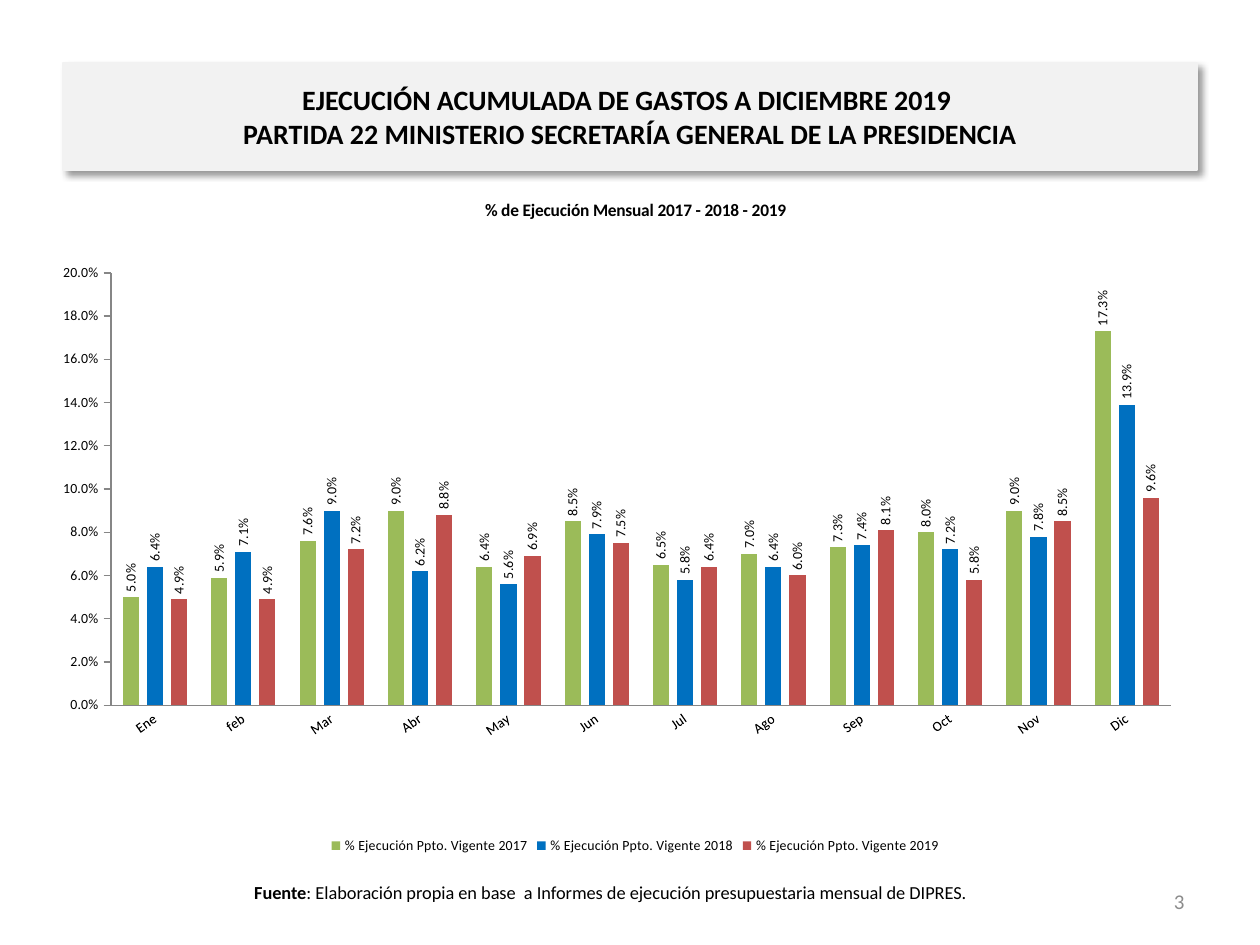
from lxml.etree import SubElement
from pptx import Presentation
from pptx.chart.data import CategoryChartData
from pptx.dml.color import RGBColor
from pptx.enum.chart import (XL_CHART_TYPE, XL_LABEL_POSITION as LABEL_POS,
                             XL_LEGEND_POSITION as LEGEND_POS, XL_TICK_MARK as TICK)
from pptx.enum.text import MSO_ANCHOR as ANCHOR, MSO_AUTO_SIZE as AUTO, PP_ALIGN as ALIGN
from pptx.oxml import parse_xml
from pptx.oxml.ns import nsdecls, qn
from pptx.util import Cm, Pt

FONT = "Calibri"
PERCENT = "0.0%"
COLORS = {
    "text": "000000", "number": "8C8C8C", "band": "F2F2F2", "axis": "868686",
    "2017": "9BBB59", "2018": "0070C0", "2019": "C0504D",
}
MONTHS = ["Ene", "feb", "Mar", "Abr", "May", "Jun",
          "Jul", "Ago", "Sep", "Oct", "Nov", "Dic"]
EXECUTION = {
    "2017": [5.0, 5.9, 7.6, 9.0, 6.4, 8.5, 6.5, 7.0, 7.3, 8.0, 9.0, 17.3],
    "2018": [6.4, 7.1, 9.0, 6.2, 5.6, 7.9, 5.8, 6.4, 7.4, 7.2, 7.8, 13.9],
    "2019": [4.9, 4.9, 7.2, 8.8, 6.9, 7.5, 6.4, 6.0, 8.1, 5.8, 8.5, 9.6],
}
PLOT_AREA = {"x": 0.033, "y": 0.143, "w": 0.944, "h": 0.632}


def rgb(name):
    return RGBColor.from_string(COLORS[name])


def set_attrs(obj, **values):
    for name, value in values.items():
        setattr(obj, name, value)


def format_font(font, size, color="text", bold=False):
    set_attrs(font, name=FONT, size=Pt(size), bold=bold)
    font.color.rgb = rgb(color)


def place(sp, left, top, width, height):
    set_attrs(sp, left=Cm(left), top=Cm(top), width=Cm(width), height=Cm(height))


def add_run(p, text, size, **style):
    r = p.add_run()
    r.text = text
    format_font(r.font, size, **style)


def add_title(slide, lines):
    sp = slide.shapes.title
    place(sp, 1.27, 1.27, 22.86, 2.16)
    sp.fill.solid()
    sp.fill.fore_color.rgb = rgb("band")
    sp.line.color.rgb = rgb("band")
    sp.line.width = Pt(0.75)
    sp._element.spPr.append(parse_xml(
        f'<a:effectLst {nsdecls("a")}><a:outerShdw blurRad="{Pt(4)}" dist="{Pt(3)}" '
        f'dir="2700000" algn="tl" rotWithShape="0"><a:srgbClr val="{COLORS["text"]}">'
        '<a:alpha val="40000"/></a:srgbClr></a:outerShdw></a:effectLst>'))
    tf = sp.text_frame
    set_attrs(tf, auto_size=AUTO.NONE, word_wrap=True, vertical_anchor=ANCHOR.MIDDLE)
    p = tf.paragraphs[0]
    p.alignment = ALIGN.CENTER
    for i, line in enumerate(lines):
        if i:
            p.add_line_break()
        add_run(p, line, 16, bold=True)


def add_text(slide, box, align):
    """Add a one-line text box and return its paragraph."""
    tf = slide.shapes.add_textbox(*map(Cm, box)).text_frame
    set_attrs(tf, word_wrap=True, vertical_anchor=ANCHOR.MIDDLE)
    p = tf.paragraphs[0]
    p.alignment = align
    return p


def rotate_text(element, degrees):
    body = element.find(qn("c:txPr")).find(qn("a:bodyPr"))
    body.set("rot", str(degrees * 60000))
    body.set("vert", "horz")


def set_plot_layout(chart):
    plot_area = chart._chartSpace.chart.plotArea
    for old in plot_area.findall(qn("c:layout")):
        plot_area.remove(old)
    layout = parse_xml(f'<c:layout {nsdecls("c")}><c:manualLayout/></c:layout>')
    values = {"layoutTarget": "inner", "xMode": "edge", "yMode": "edge", **PLOT_AREA}
    for tag, value in values.items():
        SubElement(layout[0], qn(f"c:{tag}")).set("val", str(value))
    plot_area.insert(0, layout)


def format_axes(chart):
    cat, val = chart.category_axis, chart.value_axis
    for axis in (cat, val):
        axis.has_major_gridlines = False
        format_font(axis.tick_labels.font, 8)
        axis.format.line.color.rgb = rgb("axis")
    set_attrs(cat, major_tick_mark=TICK.NONE)
    rotate_text(cat._element, -35)
    set_attrs(val, minimum_scale=0, maximum_scale=0.2, major_unit=0.02,
              major_tick_mark=TICK.OUTSIDE)
    set_attrs(val.tick_labels, number_format=PERCENT, number_format_is_linked=False)


def format_series(series, color):
    series.format.fill.solid()
    series.format.fill.fore_color.rgb = rgb(color)
    labels = series.data_labels
    set_attrs(labels, show_value=True, number_format=PERCENT,
              number_format_is_linked=False, position=LABEL_POS.OUTSIDE_END)
    format_font(labels.font, 8)
    rotate_text(labels._element, -90)


def add_execution_chart(slide):
    data = CategoryChartData(number_format=PERCENT)
    data.categories = MONTHS
    for year, values in EXECUTION.items():
        data.add_series(f"% Ejecución Ppto. Vigente {year}",
                        [round(v / 100, 3) for v in values])
    chart = slide.shapes.add_chart(XL_CHART_TYPE.COLUMN_CLUSTERED, Cm(1.27), Cm(3.53),
                                   Cm(22.86), Cm(13.79), data).chart
    format_font(chart.font, 10)
    chart.has_title = True
    add_run(chart.chart_title.text_frame.paragraphs[0],
            "% de Ejecución Mensual 2017 - 2018 - 2019", 10, bold=True)
    chart.has_legend = True
    set_attrs(chart.legend, position=LEGEND_POS.BOTTOM, include_in_layout=False)
    format_font(chart.legend.font, 8)
    plot = chart.plots[0]
    set_attrs(plot, gap_width=150, overlap=-49, vary_by_categories=False)
    for series, year in zip(plot.series, EXECUTION):
        format_series(series, year)
    format_axes(chart)
    set_plot_layout(chart)


def main():
    prs = Presentation()
    set_attrs(prs, slide_width=Cm(25.4), slide_height=Cm(19.05))
    slide = prs.slides.add_slide(prs.slide_layouts[5])
    add_title(slide, ["EJECUCIÓN ACUMULADA DE GASTOS A DICIEMBRE 2019 ",
                      "PARTIDA 22 MINISTERIO SECRETARÍA GENERAL DE LA PRESIDENCIA"])
    add_run(add_text(slide, (18.21, 17.65, 5.92, 1.02), ALIGN.RIGHT), "3", 12, color="number")
    source = add_text(slide, (3.71, 17.48, 17.2, 1.02), ALIGN.CENTER)
    add_run(source, "Fuente", 10.5, bold=True)
    add_run(source, ": Elaboración propia en base  a Informes de ejecución "
                    "presupuestaria mensual de DIPRES.", 10.5)
    add_execution_chart(slide)
    prs.save("out.pptx")


if __name__ == "__main__":
    main()
